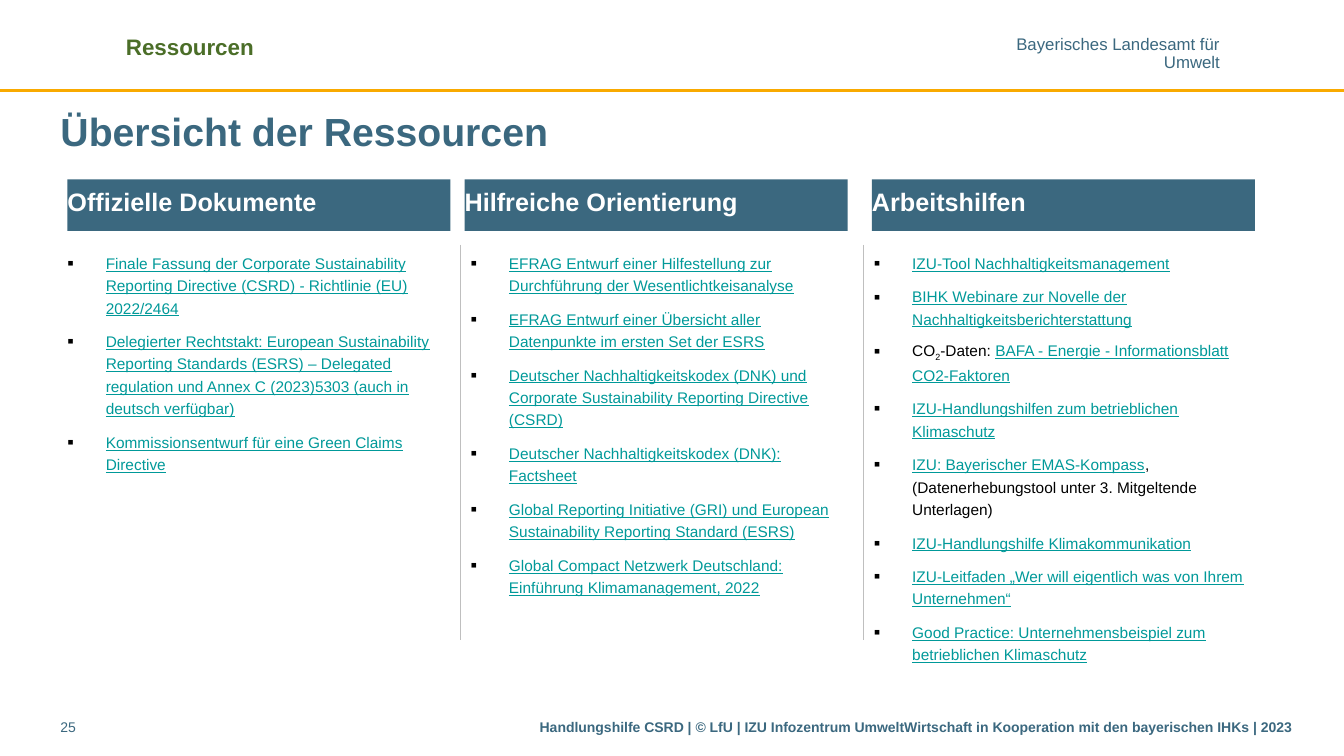
import pptx
import pptx.util
import pptx.dml.color
import pptx.enum.text
import pptx.enum.shapes
import lxml.etree
from dataclasses import dataclass
from pptx.oxml.ns import qn

ALIGN = pptx.enum.text.PP_ALIGN
ANCHOR = pptx.enum.text.MSO_ANCHOR
FIT = pptx.enum.text.MSO_AUTO_SIZE


@dataclass(frozen=True)
class Theme:
    font: str = "Arial"
    blue: str = "3B687F"
    green: str = "4B6E28"
    gold: str = "F9AA00"
    grey: str = "BFBFBF"
    link: str = "009999"
    black: str = "000000"
    white: str = "FFFFFF"
    small: int = 10
    body: int = 11
    label: int = 12
    section: int = 16
    head: int = 18
    title: int = 28


class Page:
    """Places elements on a grid of 100 columns by 100 rows."""

    def __init__(self, deck, layout, theme):
        self.theme = theme
        self.wide, self.high = deck.slide_width, deck.slide_height
        self.slide = deck.slides.add_slide(deck.slide_layouts[layout])

    def box(self, col, row, cols, rows):
        return (int(col * self.wide / 100), int(row * self.high / 100),
                int(cols * self.wide / 100), int(rows * self.high / 100))

    def color(self, code):
        return pptx.dml.color.RGBColor.from_string(code)

    def run(self, para, text, size, color, bold=False, line=False, base=0):
        run = para.add_run()
        run.text = text
        font = run.font
        font.name, font.size = self.theme.font, pptx.util.Pt(size)
        font.bold, font.underline = bold, line
        font.color.rgb = self.color(color)
        if base:
            run._r.get_or_add_rPr().set("baseline", str(base * 1000))

    def frame(self, shape, side=0.0, anchor=ANCHOR.TOP, wrap=True, edge=0.05):
        frame = shape.text_frame
        frame.word_wrap, frame.auto_size = wrap, FIT.NONE
        frame.vertical_anchor = anchor
        frame.margin_left = frame.margin_right = pptx.util.Inches(side)
        frame.margin_top = frame.margin_bottom = pptx.util.Inches(edge)
        return frame

    def place(self, shape, box):
        shape.left, shape.top, shape.width, shape.height = self.box(*box)

    def text(self, lines, box, size, color, bold=False, align=ALIGN.LEFT,
             space=1.0, **look):
        shape = self.slide.shapes.add_textbox(*self.box(*box))
        frame = self.frame(shape, **look)
        for num, line in enumerate(lines):
            para = frame.add_paragraph() if num else frame.paragraphs[0]
            para.alignment, para.line_spacing = align, space
            self.run(para, line, size, color, bold)

    def title(self, text, box):
        shape = self.slide.shapes.title
        self.place(shape, box)
        para = self.frame(shape, anchor=ANCHOR.MIDDLE).paragraphs[0]
        para.alignment = ALIGN.LEFT
        self.run(para, text, self.theme.title, self.theme.blue, True)

    def head(self, text, box):
        kind = pptx.enum.shapes.MSO_SHAPE.RECTANGLE
        shape = self.slide.shapes.add_shape(kind, *self.box(*box))
        shape.shadow.inherit = False
        shape.fill.solid()
        shape.fill.fore_color.rgb = self.color(self.theme.blue)
        shape.line.fill.background()
        para = self.frame(shape, anchor=ANCHOR.MIDDLE).paragraphs[0]
        para.alignment, para.line_spacing = ALIGN.LEFT, pptx.util.Pt(16)
        self.run(para, text, self.theme.head, self.theme.white, True)

    def bullet(self, para):
        props = para._p.get_or_add_pPr()
        indent = pptx.util.Inches(0.38)
        props.set("marL", str(indent))
        props.set("indent", str(-indent))
        color = lxml.etree.SubElement(props, qn("a:buClr"))
        lxml.etree.SubElement(color, qn("a:srgbClr"), val=self.theme.black)
        lxml.etree.SubElement(props, qn("a:buSzPct"), val="120000")
        lxml.etree.SubElement(props, qn("a:buFont"), typeface=self.theme.font)
        lxml.etree.SubElement(props, qn("a:buChar"), char="▪")

    def list(self, shape, items, box):
        self.place(shape, box)
        frame = self.frame(shape)
        for num, item in enumerate(items):
            para = frame.add_paragraph() if num else frame.paragraphs[0]
            self.bullet(para)
            para.alignment, para.line_spacing = ALIGN.LEFT, pptx.util.Pt(16)
            para.space_before = pptx.util.Pt(8 if num else 0)
            for text, kind in [(item, "link")] if isinstance(item, str) else item:
                link = kind == "link"
                color = self.theme.link if link else self.theme.black
                self.run(para, text, self.theme.body, color, line=link,
                         base=-25 if kind == "sub" else 0)

    def rule(self, col, row, cols, rows, color, width):
        left, top, wide, high = self.box(col, row, cols, rows)
        kind = pptx.enum.shapes.MSO_CONNECTOR.STRAIGHT
        line = self.slide.shapes.add_connector(
            kind, left, top, left + wide, top + high)
        line.line.color.rgb = self.color(color)
        line.line.width = pptx.util.Pt(width)
        lxml.etree.SubElement(line._element.spPr, qn("a:effectLst"))


# Heading, left edge of the heading bar, list height, list items
COLUMNS = [
    ("Offizielle Dokumente", 5.02, 52.4, [
        "Finale Fassung der Corporate Sustainability Reporting Directive "
        "(CSRD) - Richtlinie (EU) 2022/2464",
        "Delegierter Rechtstakt: European Sustainability Reporting Standards "
        "(ESRS) – Delegated regulation und Annex C (2023)5303 "
        "(auch in deutsch verfügbar)",
        "Kommissionsentwurf für eine Green Claims Directive",
    ]),
    ("Hilfreiche Orientierung", 34.58, 62, [
        "EFRAG Entwurf einer Hilfestellung zur Durchführung der "
        "Wesentlichtkeisanalyse",
        "EFRAG Entwurf einer Übersicht aller Datenpunkte im ersten Set der ESRS",
        "Deutscher Nachhaltigkeitskodex (DNK) und Corporate Sustainability "
        "Reporting Directive (CSRD)",
        "Deutscher Nachhaltigkeitskodex (DNK): Factsheet",
        "Global Reporting Initiative (GRI) und European Sustainability "
        "Reporting Standard (ESRS)",
        "Global Compact Netzwerk Deutschland: Einführung Klimamanagement, 2022",
    ]),
    ("Arbeitshilfen", 64.88, 55.33, [
        "IZU-Tool Nachhaltigkeitsmanagement",
        "BIHK Webinare zur Novelle der Nachhaltigkeitsberichterstattung",
        [("CO", "plain"), ("2", "sub"), ("-Daten: ", "plain"),
         ("BAFA - Energie - Informationsblatt CO2-Faktoren", "link")],
        "IZU-Handlungshilfen zum betrieblichen Klimaschutz",
        [("IZU: Bayerischer EMAS-Kompass", "link"),
         (", (Datenerhebungstool unter 3. Mitgeltende Unterlagen)", "plain")],
        "IZU-Handlungshilfe Klimakommunikation",
        "IZU-Leitfaden „Wer will eigentlich was von Ihrem Unternehmen“",
        "Good Practice: Unternehmensbeispiel zum betrieblichen Klimaschutz",
    ]),
]


def main():
    deck = pptx.Presentation()
    deck.slide_width = pptx.util.Inches(13.33)
    deck.slide_height = pptx.util.Inches(7.5)
    theme = Theme()
    page = Page(deck, 4, theme)

    # Top band
    page.rule(0, 12, 100, 0, theme.gold, 2)
    page.text(["Bayerisches Landesamt für", "Umwelt"], (75.54, 4.93, 15.23, 4.53),
              theme.label, theme.blue, align=ALIGN.RIGHT, space=0.85,
              wrap=False, edge=0)
    page.text(["Ressourcen"], (8.63, 3.73, 27.76, 4.93), theme.section,
              theme.green, True, side=0.1)
    page.title("Übersicht der Ressourcen", (4.5, 13.6, 92.35, 7.33))

    # Three columns with dividers between them
    slots = [hold for hold in page.slide.placeholders
             if hold.placeholder_format.idx in (1, 2, 3, 4)]
    for num, (head, left, rows, items) in enumerate(COLUMNS):
        page.head(head, (left, 23.73, 28.5, 6.8))
        page.list(slots[num], items, (5.02 + 30 * num, 32.4, 28.35, rows))
        if num:
            page.rule(4.26 + 30 * num, 32.4, 0, 52.27, theme.grey, 0.75)
    spare = slots[-1]._element
    spare.getparent().remove(spare)

    # Footer
    page.text(["25"], (4.5, 94.4, 5.25, 4.13), theme.small, theme.blue)
    page.text(["Handlungshilfe CSRD | © LfU | IZU Infozentrum UmweltWirtschaft "
               "in Kooperation mit den bayerischen IHKs | 2023"],
              (38.78, 94.4, 58.06, 4.13), theme.small, theme.blue, True,
              align=ALIGN.RIGHT, side=0.1)

    deck.save("out.pptx")


if __name__ == "__main__":
    main()
